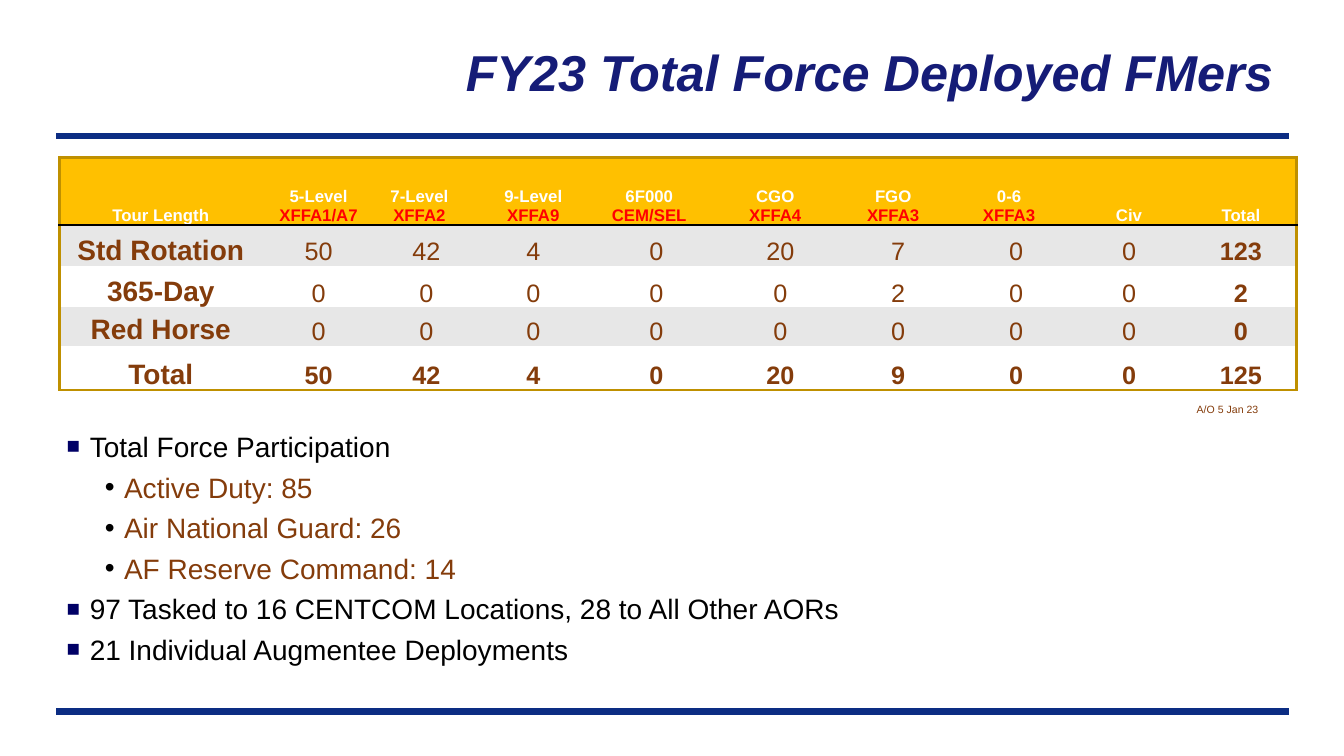
import pptx
import pptx.util
import pptx.dml.color
import pptx.enum.shapes
import pptx.enum.text
from dataclasses import dataclass
from lxml import etree

TITLE = "FY23 Total Force Deployed FMers"
AS_OF = "A/O 5 Jan 23"
HEADERS = [
    ("Tour Length", None, 0),
    ("5-Level", "XFFA1/A7", 0),
    ("7-Level", "XFFA2", 0.14),
    ("9-Level", "XFFA9", 0),
    ("6F000", "CEM/SEL", 0.14),
    ("CGO", "XFFA4", 0.1),
    ("FGO", "XFFA3", 0.1),
    ("0-6", "XFFA3", 0.14),
    ("Civ", None, 0),
    ("Total", None, 0),
]
TOURS = [
    ("Std Rotation", 50, 42, 4, 0, 20, 7, 0, 0, 123),
    ("365-Day", 0, 0, 0, 0, 0, 2, 0, 0, 2),
    ("Red Horse", 0, 0, 0, 0, 0, 0, 0, 0, 0),
    ("Total", 50, 42, 4, 0, 20, 9, 0, 0, 125),
]
BULLETS = [
    (0, "Total Force Participation"),
    (1, "Active Duty: 85"),
    (1, "Air National Guard: 26"),
    (1, "AF Reserve Command: 14"),
    (0, "97 Tasked to 16 CENTCOM Locations, 28 to All Other AORs"),
    (0, "21 Individual Augmentee Deployments"),
]
COLUMNS = [2.01, 1.12, 1.02, 1.1, 1.34, 1.12, 1.22, 1.12, 1.12, 1.1]
ROWS = [0.67, 0.41, 0.41, 0.38, 0.44]
RULES = [1.35, 7.06]


@dataclass(frozen=True)
class Theme:
    font: str = "Arial"
    navy: str = "151C77"
    rule: str = "0C2D83"
    gold: str = "FFC000"
    edge: str = "BF9000"
    band: str = "E7E7E7"
    white: str = "FFFFFF"
    black: str = "000000"
    red: str = "FF0000"
    brown: str = "843C0B"
    marker: str = "000066"
    title: float = 36
    body: float = 20
    figure: float = 18
    header: float = 12
    note: float = 7.5


T = Theme()
LEVELS = [
    dict(margin=0.23, hang=0.23, char="■", size=80, marker=T.marker, color=T.black),
    dict(margin=0.57, hang=0.19, char="•", size=100, marker=T.black, color=T.brown),
]
A = "http://schemas.openxmlformats.org/drawingml/2006/main"
inch = pptx.util.Inches
ALIGN = pptx.enum.text.PP_ALIGN
ANCHOR = pptx.enum.text.MSO_ANCHOR


def rgb(color):
    return pptx.dml.color.RGBColor.from_string(color)


def node(parent, tag, **attrs):
    return etree.SubElement(parent, f"{{{A}}}{tag}", {k: str(v) for k, v in attrs.items()})


def write(p, text, size, color, bold=False, italic=False, align=ALIGN.LEFT):
    p.add_run().text = text
    p.alignment = align
    f = p.font
    f.name, f.size, f.bold, f.italic = T.font, pptx.util.Pt(size), bold, italic
    f.color.rgb = rgb(color)


def add_box(slide, left, top, width, height):
    tf = slide.shapes.add_textbox(*map(inch, (left, top, width, height))).text_frame
    tf.word_wrap = True
    return tf


def add_rule(slide, y):
    ln = slide.shapes.add_connector(
        pptx.enum.shapes.MSO_CONNECTOR.STRAIGHT, inch(0.56), inch(y), inch(12.78), inch(y))
    ln.line.color.rgb = rgb(T.rule)
    ln.line.width = pptx.util.Pt(4.5)
    node(ln._element.spPr, "effectLst")


def set_borders(cell, borders):
    tc_pr = cell._tc.get_or_add_tcPr()
    for i, (side, border) in enumerate(borders.items()):
        ln = node(tc_pr, f"ln{side}")
        if border:
            color, width = border
            ln.set("w", str(pptx.util.Pt(width)))
            node(node(ln, "solidFill"), "srgbClr", val=color)
        else:
            node(ln, "noFill")
        tc_pr.insert(i, ln)


def add_table(slide):
    n_rows, n_cols = len(ROWS), len(COLUMNS)
    table = slide.shapes.add_table(
        n_rows, n_cols, inch(0.59), inch(1.56), inch(sum(COLUMNS)), inch(sum(ROWS))).table
    table.first_row = table.horz_banding = False
    for column, width in zip(table.columns, COLUMNS):
        column.width = inch(width)
    for row, height in zip(table.rows, ROWS):
        row.height = inch(height)

    frame = (T.edge, 2.25)
    across = {0: frame, 1: (T.black, 2), n_rows: frame}
    down = {0: frame, n_cols: frame}
    for r in range(n_rows):
        for c in range(n_cols):
            cell = table.cell(r, c)
            cell.margin_left = cell.margin_right = cell.margin_top = cell.margin_bottom = 0
            cell.vertical_anchor = ANCHOR.BOTTOM
            cell.fill.solid()
            cell.fill.fore_color.rgb = rgb(T.gold if r == 0 else T.band if r % 2 else T.white)
            set_borders(cell, {"L": down.get(c), "R": down.get(c + 1),
                               "T": across.get(r), "B": across.get(r + 1)})
            p = cell.text_frame.paragraphs[0]
            if r == 0:
                label, code, shift = HEADERS[c]
                if shift:
                    p._p.get_or_add_pPr().set("marR", str(inch(shift)))
                write(p, label, T.header, T.white, True, align=ALIGN.CENTER)
                if code:
                    write(cell.text_frame.add_paragraph(), code, T.header, T.red, True,
                          align=ALIGN.CENTER)
            else:
                write(p, str(TOURS[r - 1][c]), T.figure if c else T.body, T.brown,
                      c in (0, n_cols - 1) or r == n_rows - 1, align=ALIGN.CENTER)


def add_bullets(slide):
    tf = add_box(slide, 0.59, 4.22, 9.71, 2.62)
    tf.margin_left = tf.margin_right = inch(0.07)
    tf.margin_top = tf.margin_bottom = inch(0.04)
    for i, (level, text) in enumerate(BULLETS):
        p = tf.add_paragraph() if i else tf.paragraphs[0]
        style = LEVELS[level]
        p.level = level
        p_pr = p._p.get_or_add_pPr()
        p_pr.set("marL", str(inch(style["margin"])))
        p_pr.set("indent", str(-inch(style["hang"])))
        node(node(p_pr, "buClr"), "srgbClr", val=style["marker"])
        node(p_pr, "buSzPct", val=style["size"] * 1000)
        node(p_pr, "buFont", typeface=T.font)
        node(p_pr, "buChar", char=style["char"])
        p.space_before = pptx.util.Pt(5 if i else 0)
        write(p, text, T.body, style["color"])


def main():
    prs = pptx.Presentation()
    prs.slide_width, prs.slide_height = inch(13.33), inch(7.5)
    slide = prs.slides.add_slide(prs.slide_layouts[6])
    for y in RULES:
        add_rule(slide, y)
    tf = add_box(slide, 1.36, 0.43, 11.37, 0.56)
    tf.vertical_anchor = ANCHOR.MIDDLE
    write(tf.paragraphs[0], TITLE, T.title, T.navy, True, True, ALIGN.RIGHT)
    add_table(slide)
    add_bullets(slide)
    write(add_box(slide, 11.77, 3.95, 0.95, 0.23).paragraphs[0], AS_OF, T.note, T.brown)
    prs.save("out.pptx")


if __name__ == "__main__":
    main()
